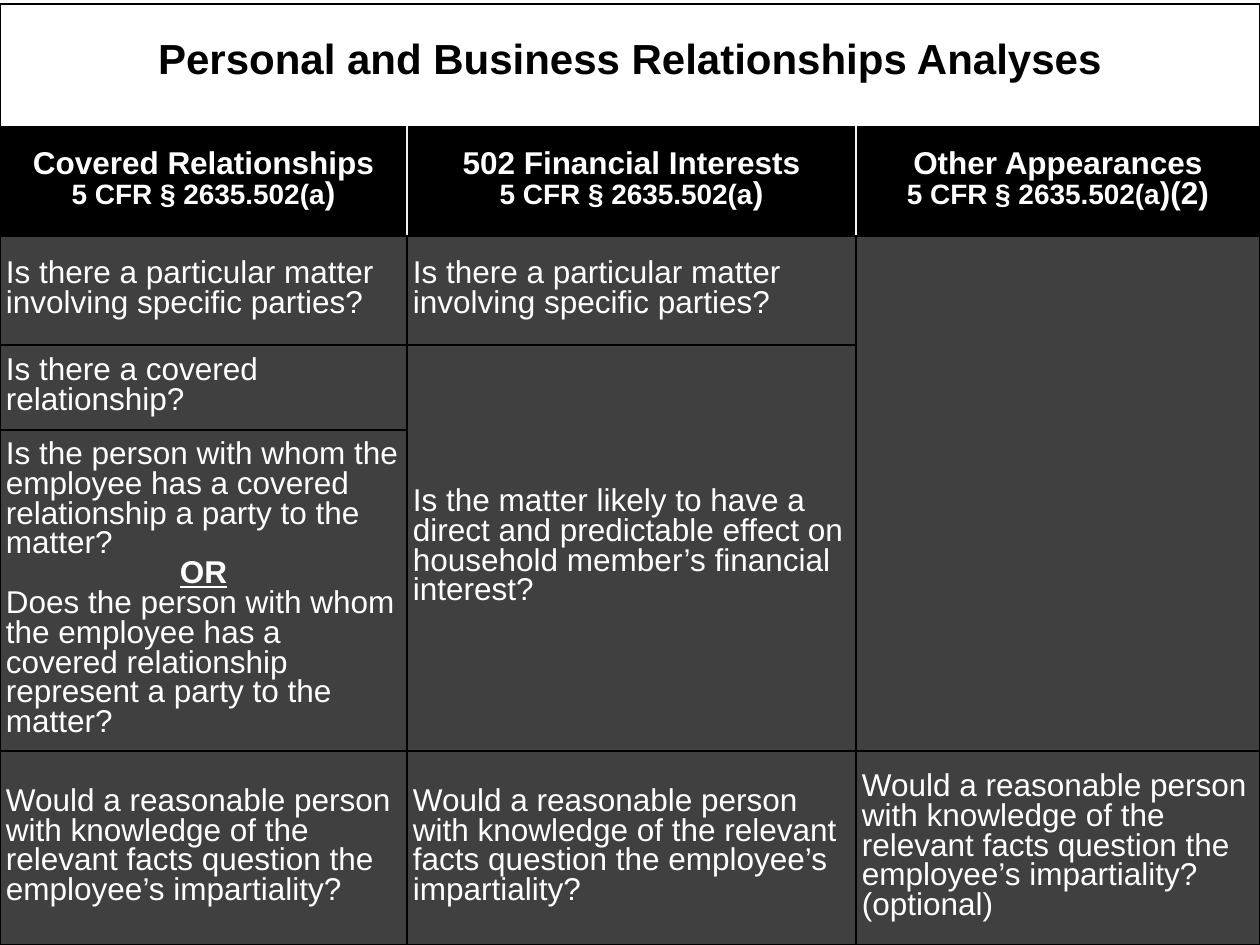
from dataclasses import dataclass
from itertools import product

from lxml.etree import SubElement
from pptx import Presentation
from pptx.dml.color import RGBColor
from pptx.enum.text import MSO_ANCHOR, PP_ALIGN
from pptx.oxml.ns import qn
from pptx.table import Table, _Cell
from pptx.util import Emu, Pt

PX = 914400 / 126
COLORS = {
    "white": "FFFFFF",
    "black": "000000",
    "question": "404040",
    "divider": "F2F2F2",
}
COLUMN_WIDTHS = (407, 449, 404)
ROW_HEIGHTS = (123, 109, 109, 85, 321, 194)
TABLE_TOP = 4
SIDE_MARGIN = 6
END_MARGIN = 9
TITLE_MARGIN = 44

PARTIES = "Is there a particular matter involving specific parties?"
IMPARTIALITY = (
    "Would a reasonable person with knowledge of the relevant facts "
    "question the employee’s impartiality?"
)


@dataclass(frozen=True)
class Line:
    text: str
    size: int = 18
    suffix: str = ""
    bold: bool = False
    underline: bool = False
    centered: bool = False


@dataclass(frozen=True)
class Entry:
    row: int
    column: int
    lines: tuple[Line, ...] = ()
    row_span: int = 1
    column_span: int = 1
    fill: str = "question"
    ink: str = "white"
    leading: int = 17


def header(column: int, heading: str, suffix: str) -> Entry:
    citation = Line("5 CFR § 2635.502(a", 16, suffix, bold=True, centered=True)
    return Entry(1, column, (Line(heading, bold=True, centered=True), citation), fill="black")


def question(row: int, column: int, text: str, row_span: int = 1) -> Entry:
    return Entry(row, column, (Line(text),), row_span)


TITLE = Entry(
    0, 0,
    (Line("Personal and Business Relationships Analyses", 24, bold=True, centered=True),),
    column_span=3, fill="white", ink="black", leading=20,
)
ENTRIES = (
    TITLE,
    header(0, "Covered Relationships", ")"),
    header(1, "502 Financial Interests", ")"),
    header(2, "Other Appearances", ")(2)"),
    question(2, 0, PARTIES),
    question(2, 1, PARTIES),
    Entry(2, 2, row_span=3),
    question(3, 0, "Is there a covered relationship?"),
    question(
        3, 1,
        "Is the matter likely to have a direct and predictable effect on "
        "household member’s financial interest?",
        row_span=2,
    ),
    Entry(4, 0, (
        Line("Is the person with whom the employee has a covered relationship "
             "a party to the matter?"),
        Line("OR", bold=True, underline=True, centered=True),
        Line("Does the person with whom the employee has a covered relationship "
             "represent a party to the matter?"),
    )),
    question(5, 0, IMPARTIALITY),
    question(5, 1, IMPARTIALITY),
    question(5, 2, f"{IMPARTIALITY} (optional)"),
)


def px(length: int) -> Emu:
    return Emu(round(length * PX))


def rgb(name: str) -> RGBColor:
    return RGBColor.from_string(COLORS[name])


def draw_borders(cell: _Cell, row: int, column: int) -> None:
    last = len(COLUMN_WIDTHS) - 1
    edges = {
        "a:lnL": "divider" if row == 1 and column > 0 else "black",
        "a:lnR": "divider" if row == 1 and column < last else "black",
        "a:lnT": "black",
        "a:lnB": "black",
    }
    properties = cell._tc.get_or_add_tcPr()
    for tag, color in edges.items():
        border = SubElement(properties, qn(tag), w=str(Pt(1)))
        fill = SubElement(border, qn("a:solidFill"))
        SubElement(fill, qn("a:srgbClr"), val=COLORS[color])


def write_lines(cell: _Cell, entry: Entry) -> None:
    frame = cell.text_frame
    frame.text = "\n".join(line.text for line in entry.lines)
    for paragraph, line in zip(frame.paragraphs, entry.lines):
        paragraph.alignment = PP_ALIGN.CENTER if line.centered else PP_ALIGN.LEFT
        paragraph.line_spacing = Pt(entry.leading)
        if line.suffix:
            paragraph.add_run().text = line.suffix
        for run, size in zip(paragraph.runs, (line.size, 18)):
            run.font.name = "Arial"
            run.font.size = Pt(size)
            run.font.bold = line.bold
            run.font.underline = line.underline
            run.font.color.rgb = rgb(entry.ink)


def draw_entry(table: Table, entry: Entry) -> None:
    origin = table.cell(entry.row, entry.column)
    last_row = entry.row + entry.row_span - 1
    last_column = entry.column + entry.column_span - 1
    if entry.row_span > 1 or entry.column_span > 1:
        origin.merge(table.cell(last_row, last_column))
    covered = product(
        range(entry.row, last_row + 1), range(entry.column, last_column + 1)
    )
    for row, column in covered:
        cell = table.cell(row, column)
        draw_borders(cell, row, column)
        cell.fill.solid()
        cell.fill.fore_color.rgb = rgb(entry.fill)
    is_title = entry is TITLE
    origin.vertical_anchor = MSO_ANCHOR.TOP if is_title else MSO_ANCHOR.MIDDLE
    origin.margin_left = origin.margin_right = px(SIDE_MARGIN)
    origin.margin_top = px(TITLE_MARGIN if is_title else END_MARGIN)
    origin.margin_bottom = px(END_MARGIN)
    write_lines(origin, entry)


def main() -> None:
    presentation = Presentation()
    presentation.slide_width = px(1260)
    presentation.slide_height = px(945)
    slide = presentation.slides.add_slide(presentation.slide_layouts[6])
    table = slide.shapes.add_table(
        len(ROW_HEIGHTS), len(COLUMN_WIDTHS),
        0, px(TABLE_TOP), px(sum(COLUMN_WIDTHS)), px(sum(ROW_HEIGHTS)),
    ).table
    table.first_row = False
    table.horz_banding = False
    for column, width in zip(table.columns, COLUMN_WIDTHS):
        column.width = px(width)
    for row, height in zip(table.rows, ROW_HEIGHTS):
        row.height = px(height)
    for entry in ENTRIES:
        draw_entry(table, entry)
    presentation.save("out.pptx")


if __name__ == "__main__":
    main()
